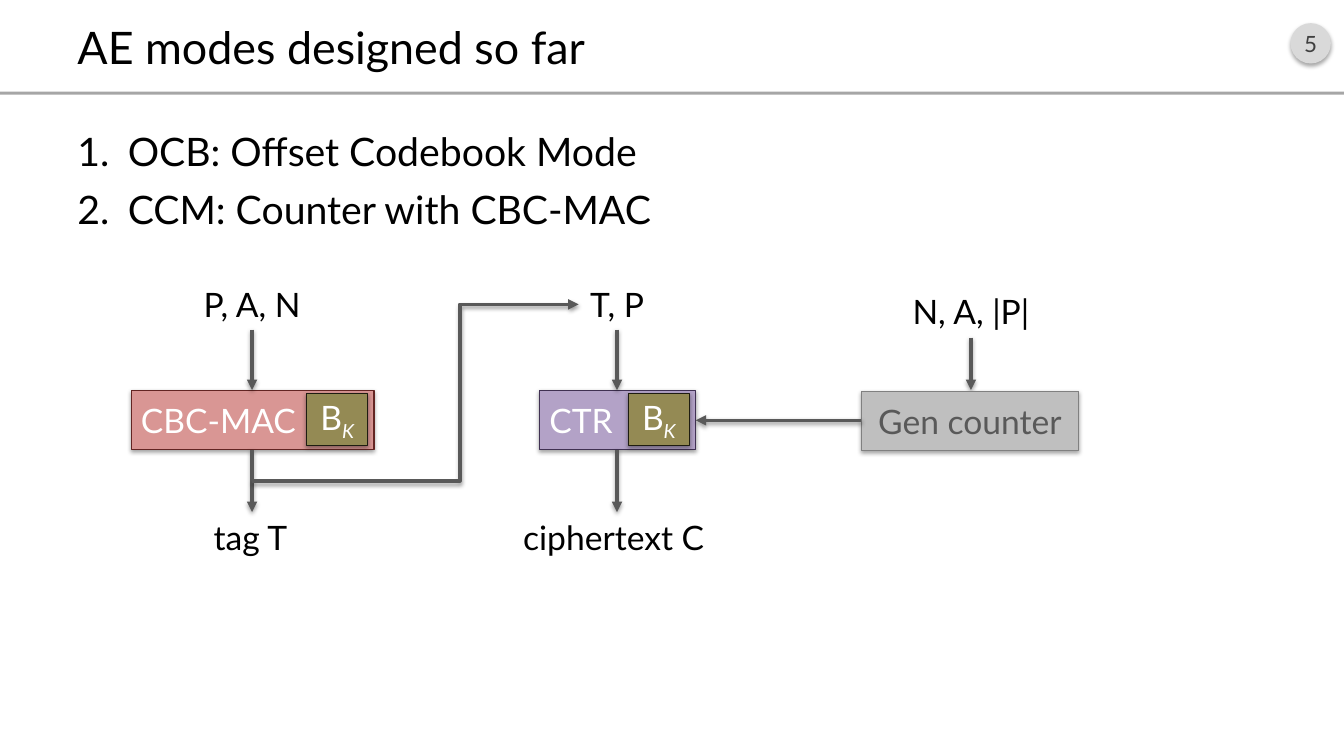
from lxml import etree
from pptx import Presentation
from pptx.dml.color import RGBColor
from pptx.enum import shapes, text
from pptx.oxml import ns
from pptx.util import Inches, Pt

BLACK = RGBColor(0, 0, 0)
WHITE = RGBColor(255, 255, 255)
DARK = RGBColor(0x40, 0x40, 0x40)
GRAY = RGBColor(0x59, 0x59, 0x59)
RULE = RGBColor(0xA6, 0xA6, 0xA6)
DISC = RGBColor(0xD9, 0xD9, 0xD9)
RED, MAROON = RGBColor(0xD9, 0x96, 0x94), RGBColor(0x63, 0x25, 0x23)
LILAC, PLUM = RGBColor(0xB3, 0xA2, 0xC7), RGBColor(0x40, 0x31, 0x52)
OLIVE, SOOT = RGBColor(0x94, 0x8A, 0x54), RGBColor(0x1E, 0x1C, 0x11)
SILVER, STEEL = RGBColor(0xBF, 0xBF, 0xBF), RGBColor(0x80, 0x80, 0x80)
LEFT, CENTER = text.PP_ALIGN.LEFT, text.PP_ALIGN.CENTER
MIDDLE, TOP = text.MSO_ANCHOR.MIDDLE, text.MSO_ANCHOR.TOP
RECT, OVAL = shapes.MSO_SHAPE.RECTANGLE, shapes.MSO_SHAPE.OVAL

# Content
TITLE = "AE modes designed so far"
PAGE = "5"
MODES = ["OCB: Offset Codebook Mode", "CCM: Counter with CBC-MAC"]
# box label, left, width, fill, line, arrow x, input text, output text, output left and width
STAGES = [
    ("CBC-MAC", 1.3, 2.41, RED, MAROON, 2.5, "P, A, N", "tag T", 2.02, 0.96),
    ("CTR", 5.35, 1.55, LILAC, PLUM, 6.12, "T, P", "ciphertext C", 5.09, 2.06),
]
COUNTER = ("Gen counter", 8.54, 2.16, 9.63, "N, A, |P|")

# Rows of the diagram
IN_Y, BOX_Y, BOX_H, OUT_Y, TEXT_H = 2.77, 3.87, 0.59, 5.08, 0.5
KEY_W, KEY_H, KEY_GAP = 0.61, 0.52, 0.06

prs = Presentation()
prs.slide_width, prs.slide_height = Inches(13.33), Inches(7.5)
slide = prs.slides.add_slide(prs.slide_layouts[6])


def shade(props, alpha, dist):
    """Soft shadow straight below a part."""
    old = props.find(ns.qn("a:effectLst"))
    if old is not None:
        props.remove(old)
    effect = etree.SubElement(props, ns.qn("a:effectLst"))
    cast = etree.SubElement(effect, ns.qn("a:outerShdw"), blurRad=str(Pt(3.1)),
                            dist=str(Pt(dist)), dir="5400000", rotWithShape="0")
    tint = etree.SubElement(cast, ns.qn("a:srgbClr"), val="000000")
    etree.SubElement(tint, ns.qn("a:alpha"), val=str(alpha * 1000))


def write(shape, words, size=24, color=BLACK, align=LEFT, anchor=TOP, wrap=True):
    frame = shape.text_frame
    frame.text = words
    frame.word_wrap = wrap
    frame.vertical_anchor = anchor
    for par in frame.paragraphs:
        par.alignment = align
        for run in par.runs:
            style(run, size, color)
    return frame


def style(run, size, color):
    run.font.name, run.font.size = "Lato", Pt(size)
    run.font.color.rgb = color


def label(x, y, w, h, words, **look):
    spot = slide.shapes.add_textbox(Inches(x), Inches(y), Inches(w), Inches(h))
    return write(spot, words, **look)


def block(kind, x, y, w, h, fill, line=None, shadow=True):
    shape = slide.shapes.add_shape(kind, Inches(x), Inches(y), Inches(w), Inches(h))
    shape.fill.solid()
    shape.fill.fore_color.rgb = fill
    if line is None:
        shape.line.fill.background()
    else:
        shape.line.color.rgb, shape.line.width = line, Pt(0.75)
    shape.shadow.inherit = False
    if shadow:
        shade(shape._element.spPr, 35, 1.8)
    return shape


def arrow(x1, y1, x2, y2, bend=None):
    kind = shapes.MSO_CONNECTOR.STRAIGHT if bend is None else shapes.MSO_CONNECTOR.ELBOW
    link = slide.shapes.add_connector(kind, Inches(x1), Inches(y1), Inches(x2), Inches(y2))
    link.line.color.rgb, link.line.width = GRAY, Pt(2.5)
    props = link._element.spPr
    etree.SubElement(props.find(ns.qn("a:ln")), ns.qn("a:tailEnd"), type="triangle")
    shade(props, 38, 1.6)
    if bend is not None:
        part = round((bend - x1) / (x2 - x1) * 100000)
        geom = props.find(ns.qn("a:prstGeom"))
        marks = geom.find(ns.qn("a:avLst"))
        if marks is None:
            marks = etree.SubElement(geom, ns.qn("a:avLst"))
        etree.SubElement(marks, ns.qn("a:gd"), name="adj1", fmla=f"val {part}")


# Header
disc = block(OVAL, 12.8, 0.23, 0.4, 0.4, DISC)
page = write(disc, PAGE, 16, DARK, CENTER, MIDDLE)
page.margin_left = page.margin_right = 0
block(RECT, 0, 0.91, 13.33, 0.03, RULE, shadow=False)
label(0.67, 0.16, 12, 0.6, TITLE, size=32, anchor=MIDDLE)

# Numbered list
body = label(0.67, 1.21, 12, 5.75, "\n".join(MODES), size=28)
for par in body.paragraphs:
    par.space_before = Pt(8)
    props = par._p.get_or_add_pPr()
    props.set("marL", str(Inches(0.5)))
    props.set("indent", str(Inches(-0.5)))
    etree.SubElement(props, ns.qn("a:buFont"), typeface="+mj-lt")
    etree.SubElement(props, ns.qn("a:buAutoNum"), type="arabicPeriod")

# Cipher stages with their key blocks
for name, x, w, fill, line, mid, source, result, out_x, out_w in STAGES:
    write(block(RECT, x, BOX_Y, w, BOX_H, fill, line), name, color=WHITE, anchor=MIDDLE)
    key = block(RECT, x + w - KEY_GAP - KEY_W, BOX_Y + 0.03, KEY_W, KEY_H, OLIVE, SOOT)
    frame = write(key, "B", color=WHITE, align=CENTER, anchor=MIDDLE)
    sub = frame.paragraphs[0].add_run()
    sub.text = "K"
    style(sub, 24, WHITE)
    sub.font.italic = True
    sub.font._element.set("baseline", "-25000")
    label(mid - 0.62, IN_Y, 1.24, TEXT_H, source, align=CENTER, wrap=False)
    arrow(mid, IN_Y + TEXT_H, mid, BOX_Y)
    arrow(mid, BOX_Y + BOX_H, mid, OUT_Y)
    label(out_x, OUT_Y, out_w, TEXT_H, result, wrap=False)

# Counter stage
name, x, w, mid, source = COUNTER
label(mid - 0.7, 2.84, 1.4, TEXT_H, source, align=CENTER, wrap=False)
arrow(mid, 3.35, mid, BOX_Y)
write(block(RECT, x, BOX_Y + 0.01, w, BOX_H, SILVER, STEEL), name,
      color=GRAY, align=CENTER, anchor=MIDDLE)

# Links between stages
arrow(x, 4.17, 6.9, 4.17)
arrow(2.5, 4.77, 5.74, 3.02, bend=4.56)

prs.save("out.pptx")
